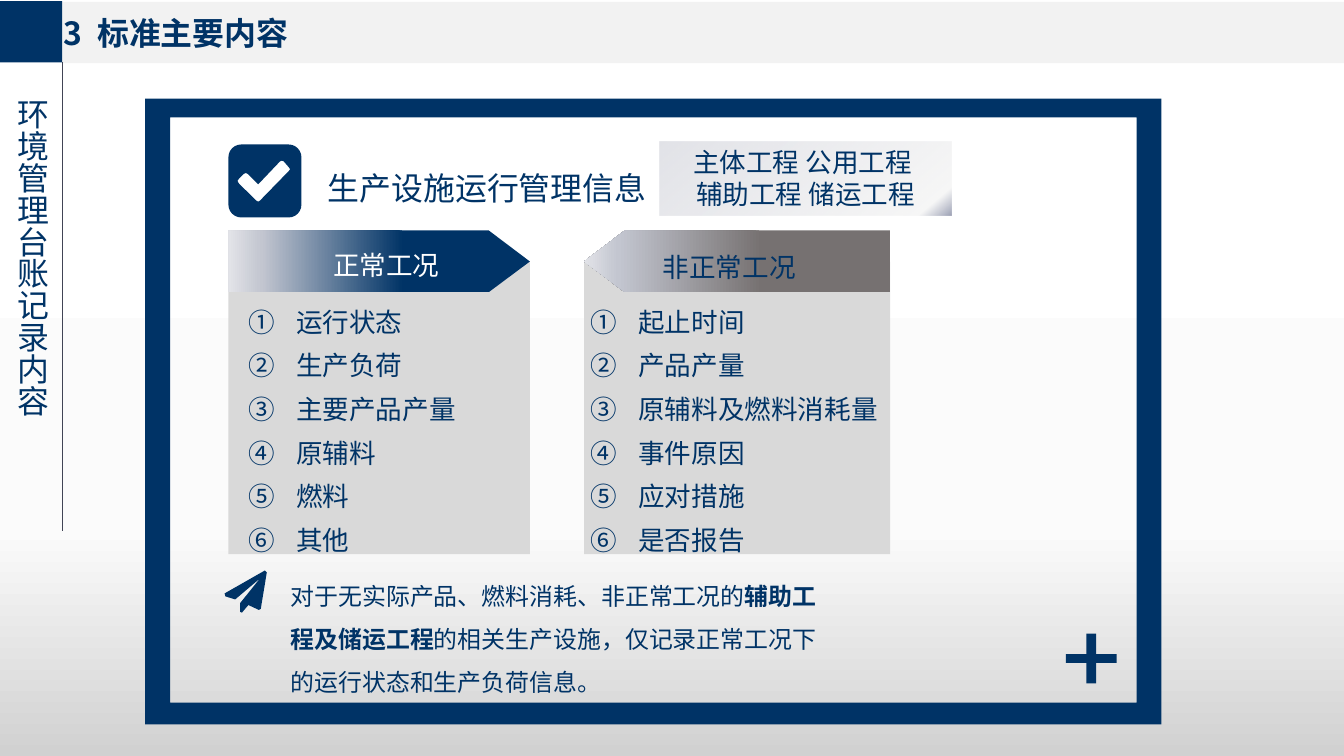
from dataclasses import dataclass
from math import cos, radians, sin

from pptx import Presentation
from pptx import util as u
from pptx.dml.color import RGBColor
from pptx.enum import shapes, text
from pptx.oxml import parse_xml
from pptx.oxml.ns import nsdecls, qn


@dataclass(frozen=True)
class Theme:
    """Colours, gradients, fonts and type sizes."""
    navy: str = "003366"
    white: str = "FFFFFF"
    bar: str = "F2F2F2"
    panel: str = "D9D9D9"
    rule: str = "414455"
    page: tuple = ((14, "FFFFFF"), (70, "FBFBFB"), (100, "D1D1D1"))
    blue: tuple = ((42, "003366"), (89, "C3C6D0"), (100, "E2E3E8"))
    grey: tuple = ((42, "767171"), (89, "C3C6D0"), (100, "E2E3E8"))
    foil: tuple = ((0, "9BA0B4"), (9, "F7F7F7", 92), (100, "E2E3E8"))
    sans: str = "Noto Sans CJK SC"
    slim: str = "Roboto Condensed"
    big: int = 24
    mid: int = 20
    small: int = 18


class Deck:
    """Draws elements on the current slide in one style."""

    def __init__(self, theme, width, height):
        self.theme = theme
        self.show = Presentation()
        self.show.slide_width, self.show.slide_height = u.Cm(width), u.Cm(height)
        self.slide = self.show.slides.add_slide(self.show.slide_layouts[6])

    def blend(self, fill, root, stops, angle):
        """Fill with a gradient; the angle runs clockwise."""
        fill.gradient()
        fill.gradient_angle = (360 - angle) % 360
        tray = root.find(".//" + qn("a:gsLst"))
        for old in list(tray):
            tray.remove(old)
        for place, color, *alpha in stops:
            veil = f'<a:alpha val="{alpha[0] * 1000}"/>' if alpha else ""
            tray.append(parse_xml(
                f'<a:gs {nsdecls("a")} pos="{place * 1000}">'
                f'<a:srgbClr val="{color}">{veil}</a:srgbClr></a:gs>'))

    def page(self, stops):
        """Paint the slide background."""
        self.blend(self.slide.background.fill, self.slide.element, stops, 90)

    def paint(self, shape, fill, angle=180):
        """Apply a flat colour or a gradient, without line or shadow."""
        shape.shadow.inherit = False
        shape.line.fill.background()
        if isinstance(fill, str):
            shape.fill.solid()
            shape.fill.fore_color.rgb = RGBColor.from_string(fill)
        else:
            self.blend(shape.fill, shape.element.spPr, fill, angle)
        return shape

    def block(self, box, fill, angle=180, kind=shapes.MSO_SHAPE.RECTANGLE):
        """Add a preset shape."""
        shape = self.slide.shapes.add_shape(kind, *map(u.Cm, box))
        return self.paint(shape, fill, angle)

    def form(self, fill, *loops):
        """Add a freeform of one or more closed loops."""
        pen = None
        for loop in loops:
            first, *rest = [(u.Cm(x), u.Cm(y)) for x, y in loop]
            if pen is None:
                pen = self.slide.shapes.build_freeform(*first, scale=1.0)
            else:
                pen.move_to(*first)
            pen.add_line_segments(rest, close=True)
        return self.paint(pen.convert_to_shape(), fill)

    def line(self, start, end, color, width):
        """Add a straight line."""
        rule = self.slide.shapes.add_connector(
            shapes.MSO_CONNECTOR.STRAIGHT, *map(u.Cm, (*start, *end)))
        rule.line.color.rgb = RGBColor.from_string(color)
        rule.line.width = u.Pt(width)
        rule.element.spPr.append(parse_xml(f'<a:effectLst {nsdecls("a")}/>'))

    def style(self, para, size, color, font):
        """Format the runs of a paragraph."""
        for run in para.runs:
            run.font.size = u.Pt(size)
            run.font.name = font
            run.font.color.rgb = RGBColor.from_string(color)
            run.font._element.find(qn("a:latin")).addnext(parse_xml(
                f'<a:ea {nsdecls("a")} typeface="{self.theme.sans}"/>'))

    def text(self, box, words, size, color=None, font=None, wrap=True, grow=True,
             bare=False, gap=None, before=None, center=False, middle=False):
        """Add a text box and return its frame."""
        frame = self.slide.shapes.add_textbox(*map(u.Cm, box)).text_frame
        frame.text = words
        frame.word_wrap = wrap
        if grow:
            frame.auto_size = text.MSO_AUTO_SIZE.SHAPE_TO_FIT_TEXT
        if bare:
            frame.margin_left = frame.margin_right = 0
            frame.margin_top = frame.margin_bottom = 0
        if middle:
            frame.vertical_anchor = text.MSO_ANCHOR.MIDDLE
        for para in frame.paragraphs:
            if gap:
                para.line_spacing = gap
            if before:
                para.space_before = u.Pt(before)
            if center:
                para.alignment = text.PP_ALIGN.CENTER
            self.style(para, size, color or self.theme.navy, font or self.theme.sans)
        return frame

    def items(self, box, words):
        """Add a list with circled numbers."""
        frame = self.text(box, "\n".join(words), self.theme.mid, grow=False,
                          gap=1.2, before=4, middle=True)
        for para in frame.paragraphs:
            props = para._p.get_or_add_pPr()
            props.set("marL", str(u.Cm(1.27)))
            props.set("indent", str(-u.Cm(1.27)))
            props.append(parse_xml(
                f'<a:buFont {nsdecls("a")} typeface="+mj-ea"/>'))
            props.append(parse_xml(
                f'<a:buAutoNum {nsdecls("a")} type="circleNumDbPlain"/>'))


def rect(left, top, right, low):
    """Corners of a rectangle."""
    return [(left, top), (right, top), (right, low), (left, low)]


def curved(left, top, side, bend):
    """Outline of a square with round corners."""
    near, far = bend, side - bend
    hubs = [(far, far), (near, far), (near, near), (far, near)]
    return [(left + x + bend * cos(radians(turn)), top + y + bend * sin(radians(turn)))
            for k, (x, y) in enumerate(hubs)
            for turn in range(90 * k, 90 * k + 91, 15)]


TICK = [(7.67, 4.55), (7.71, 4.5), (7.67, 4.44), (7.54, 4.29), (7.49, 4.27),
        (7.44, 4.29), (6.86, 4.9), (6.58, 4.62), (6.53, 4.6), (6.48, 4.62),
        (6.35, 4.75), (6.31, 4.81), (6.35, 4.88), (6.81, 5.33), (6.86, 5.36),
        (6.91, 5.33)]
PLANE = [(7.09, 15.21), (6.93, 16.18), (6.88, 16.21), (6.6, 16.08), (6.43, 16.28),
         (6.38, 16.26), (6.38, 16.03), (6.91, 15.37), (6.25, 15.93), (5.99, 15.85),
         (5.97, 15.77), (7.04, 15.16)]


def main():
    """Build the slide."""
    t = Theme()
    deck = Deck(t, 35.71, 20.09)
    deck.page(t.page)
    deck.block((1.65, 0.05, 34.06, 1.63), t.bar)
    deck.block((0, 0.03, 1.65, 1.63), t.navy)
    title = deck.text((1.7, 0.36, 6.22, 1.04), "3  标准主要内容", t.big,
                      wrap=False, bare=True)
    title.paragraphs[0].runs[0].font.bold = True
    side = deck.text((0.36, 2.62, 1.02, 13.61), "环境管理台账记录内容", t.big, bare=True)
    side._txBody.bodyPr.set("vert", "eaVert")
    deck.line((1.65, 14.1), (1.65, 1.65), t.rule, 0.25)
    deck.text((8.46, 3.84, 9.14, 1.8), "生产设施运行管理信息", t.big,
              font=t.slim, wrap=False, gap=1.5)
    deck.form(t.navy, curved(6.07, 3.84, 1.94, 0.34), TICK)

    columns = [
        (6.07, 8.01, (6.07, 12.98, 14.08), t.blue, "正常工况", t.white,
         (6.43, 6.38), (6.35, 7.67),
         ["运行状态", "生产负荷", "主要产品产量", "原辅料", "燃料", "其他"]),
        (15.52, 8.13, (23.65, 16.61, 15.52), t.grey, "非正常工况", t.navy,
         (15.54, 6.43), (15.44, 8.2),
         ["起止时间", "产品产量", "原辅料及燃料消耗量", "事件原因", "应对措施", "是否报告"]),
    ]
    for left, width, (back, neck, tip), fill, head, ink, spot, span, words in columns:
        deck.block((left, 6.96, width, 7.77), t.panel)
        deck.form(fill, [(neck, 6.12), (back, 6.12), (back, 7.77), (neck, 7.77),
                         (tip, 6.95)])
        deck.text((*spot, 7.67, 1.14), head, t.mid, ink, grow=False, gap=1.2,
                  before=4, center=True, middle=True)
        deck.items((span[0], 7.98, span[1], 6.76), words)

    scope = (17.53, 3.76, 7.75, 1.96)
    deck.block(scope, t.foil, 230)
    deck.text(scope, "主体工程 公用工程 \n辅助工程 储运工程", t.mid, center=True)

    note = deck.text((7.47, 14.94, 15.01, 3.71), "对于无实际产品、燃料消耗、非正常工况的",
                     t.small, gap=1.5)
    para = note.paragraphs[0]
    for words, bold in (("辅助工程及储运工程", True),
                        ("的相关生产设施，仅记录正常工况下的运行状态和生产负荷信息。", False)):
        run = para.add_run()
        run.text = words
        run.font.bold = bold
    deck.style(para, t.small, t.navy, t.slim)

    deck.form(t.navy, PLANE)
    deck.form(t.navy, rect(3.86, 2.62, 30.86, 19.25), rect(4.52, 3.12, 30.2, 18.67))
    plus = deck.block((28.32, 16.84, 1.35, 1.32), t.navy, kind=shapes.MSO_SHAPE.CROSS)
    plus.adjustments[0] = 0.414
    deck.show.save("out.pptx")


if __name__ == "__main__":
    main()
